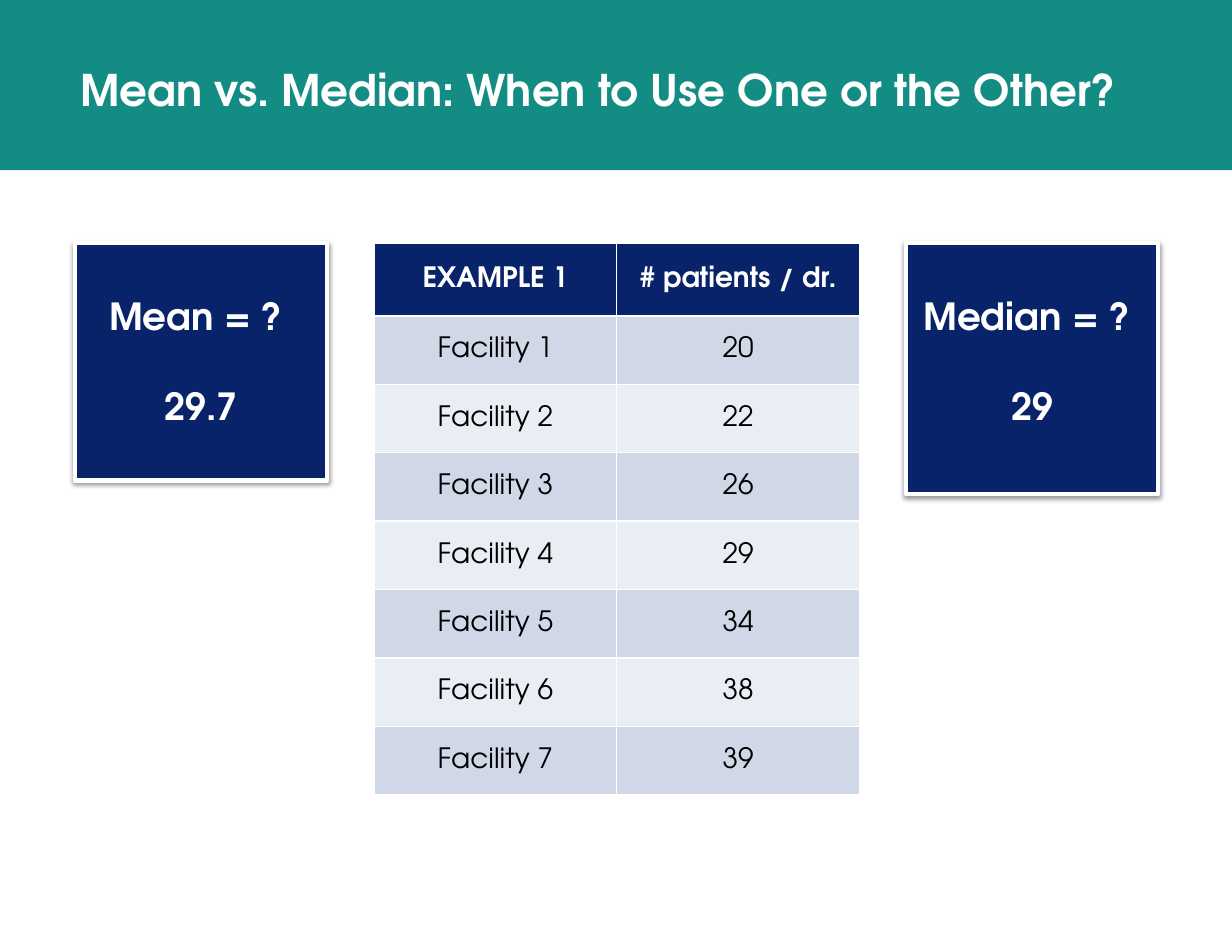
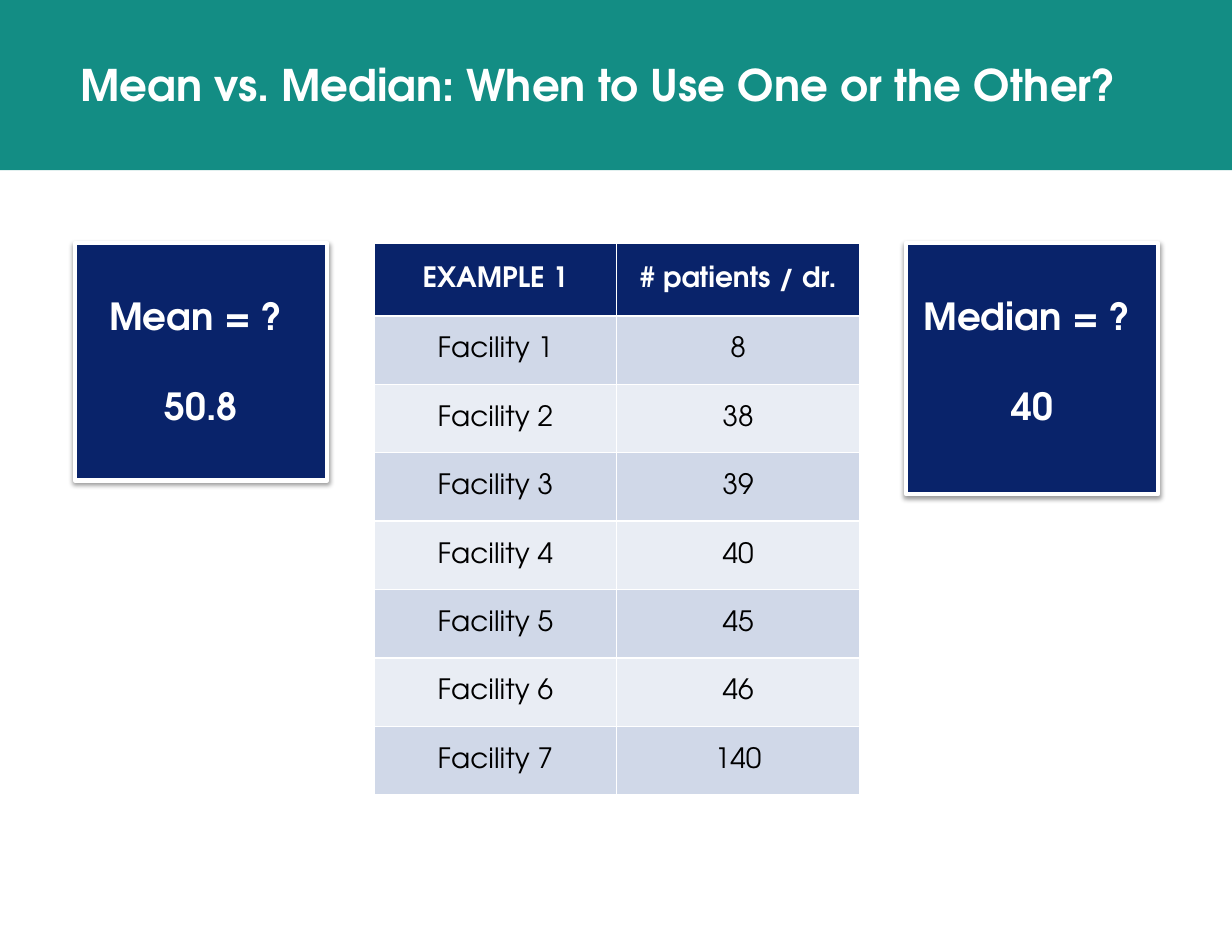
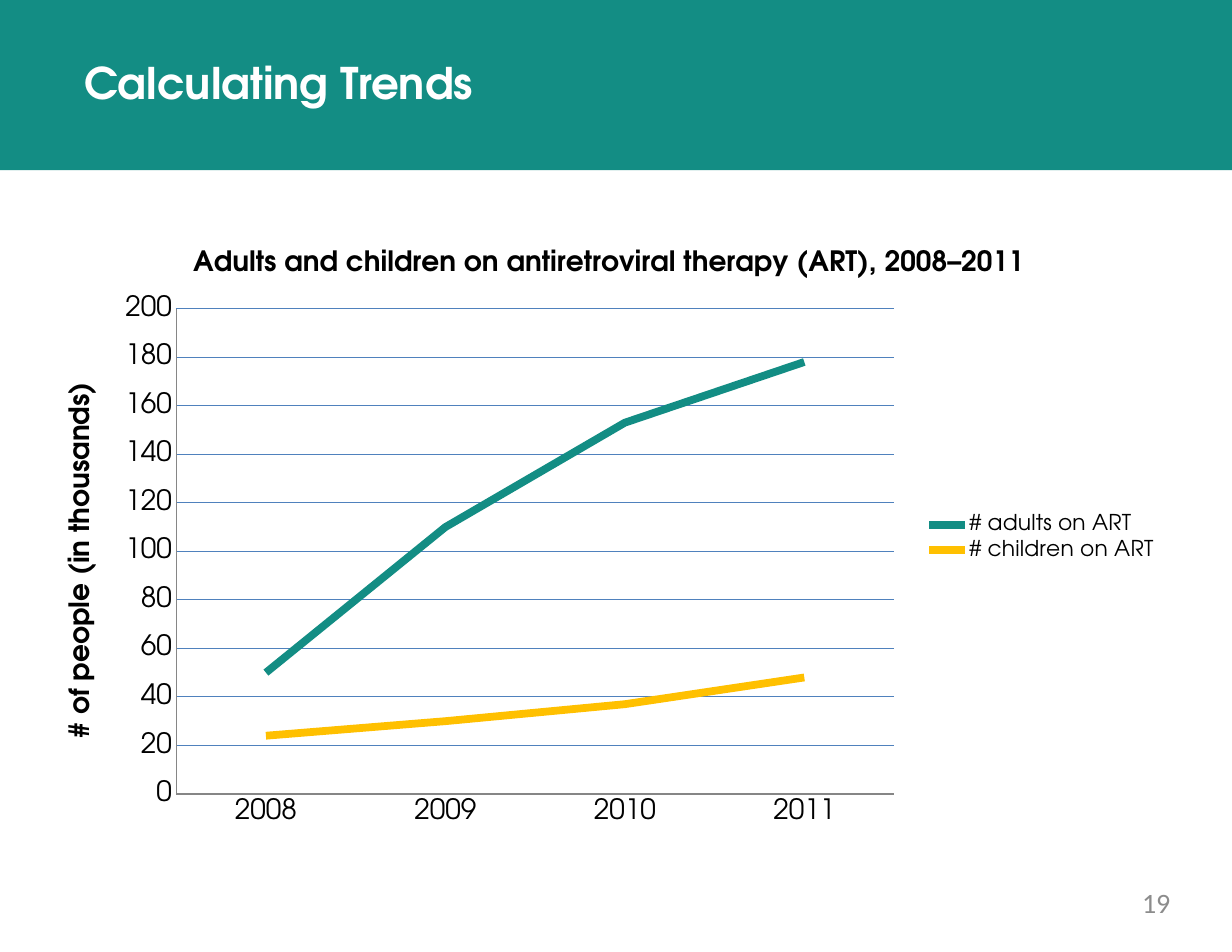
from dataclasses import dataclass

from lxml.etree import SubElement
from pptx import Presentation
from pptx.chart.data import CategoryChartData as ChartData
from pptx.dml.color import RGBColor as RGB
from pptx.enum.chart import XL_CHART_TYPE as Kind, XL_LEGEND_POSITION as Spot
from pptx.enum.chart import XL_MARKER_STYLE as Mark, XL_TICK_MARK as Tick
from pptx.enum.shapes import MSO_SHAPE as Form
from pptx.enum.text import MSO_ANCHOR as Anchor, PP_ALIGN as Align
from pptx.oxml import parse_xml
from pptx.oxml.ns import nsdecls, qn
from pptx.util import Pt

# Shared style
HUES = {
    "teal": "138D84", "navy": "09236A", "gold": "FFC000", "white": "FFFFFF",
    "black": "000000", "odd": "D0D8E8", "even": "E9EDF4", "grid": "4F81BD",
    "axis": "868686", "page": "8C8C8C",
}
FACE = "TeX Gyre Adventor"
WIDE, HIGH = 792, 612
TOP = 156.24
LINE = 28.8


@dataclass
class Box:
    left: float
    top: float
    width: float
    height: float

    def spread(self) -> list:
        return [Pt(n) for n in (self.left, self.top, self.width, self.height)]


@dataclass
class Card:
    label: str
    value: str
    box: Box


@dataclass
class Case:
    title: Box
    counts: list
    mean: str
    median: str


@dataclass
class Trend:
    name: str
    counts: list
    hue: str


CASES = [
    Case(Box(51.84, 40.3, 692, 67.7), [20, 22, 26, 29, 34, 38, 39], "29.7", "29"),
    Case(Box(51.84, 37.4, 710, 67.7), [8, 38, 39, 40, 45, 46, 140], "50.8", "40"),
]
TRENDS = [
    Trend("# adults on ART", [50, 110, 153, 178], "teal"),
    Trend("# children on ART", [24, 30, 37, 48], "gold"),
]


def tint(name: str) -> RGB:
    return RGB.from_string(HUES[name])


def style(font, size: float, hue: str, bold: bool = False, face: str = FACE) -> None:
    font.name, font.size, font.bold = face, Pt(size), bold
    font.color.rgb = tint(hue)


def paint(part, hue: str) -> None:
    part.fill.solid()
    part.fill.fore_color.rgb = tint(hue)


def add_text(slide, box: Box, text: str):
    frame = slide.shapes.add_textbox(*box.spread()).text_frame
    frame.word_wrap = True
    frame.margin_left = frame.margin_right = frame.margin_top = frame.margin_bottom = 0
    para = frame.paragraphs[0]
    para.text = text
    return para


def add_rect(slide, box: Box, hue: str):
    rect = slide.shapes.add_shape(Form.RECTANGLE, *box.spread())
    rect.shadow.inherit = False
    paint(rect, hue)
    rect.line.fill.background()
    return rect


def add_slide(deck, title: str, box: Box):
    slide = deck.slides.add_slide(deck.slide_layouts[6])
    add_rect(slide, Box(0, 0, WIDE, 109.44), "teal")
    style(add_text(slide, box, title).font, 28, "white", True)
    return slide


# Mean and median slides
def add_card(slide, card: Card) -> None:
    rect = add_rect(slide, card.box, "navy")
    rect.line.color.rgb = tint("white")
    rect.line.width = Pt(3)
    glow = rect._element.spPr.find(qn("a:effectLst"))
    glow.append(parse_xml(
        f'<a:outerShdw {nsdecls("a")} blurRad="{Pt(3.1)}" dist="{Pt(1.6)}" '
        f'dir="5400000" rotWithShape="0"><a:srgbClr val="{HUES["black"]}">'
        '<a:alpha val="38000"/></a:srgbClr></a:outerShdw>'))
    frame = rect.text_frame
    frame.word_wrap = True
    frame.vertical_anchor = Anchor.TOP
    frame.margin_top = Pt(3.6 + LINE)
    frame.text = f"{card.label} = ? \n{card.value}"
    for para in frame.paragraphs:
        para.alignment = Align.CENTER
        style(para.font, 24, "white", True)
    frame.paragraphs[1].space_before = Pt(LINE)


def add_grid(slide, counts: list) -> None:
    rows = [("EXAMPLE 1", "# patients / dr.")]
    rows += [(f"Facility {n}", str(count)) for n, count in enumerate(counts, 1)]
    box = Box(240.48, TOP, 312, 354.8)
    grid = slide.shapes.add_table(len(rows), 2, *box.spread()).table
    for r, texts in enumerate(rows):
        head = r == 0
        grid.rows[r].height = Pt(46.8 if head else 44)
        for c, text in enumerate(texts):
            cell = grid.cell(r, c)
            paint(cell, "navy" if head else "odd" if r % 2 else "even")
            cell.vertical_anchor = Anchor.MIDDLE
            cell.text = text
            para = cell.text_frame.paragraphs[0]
            para.alignment = Align.CENTER
            style(para.font, 18, "white" if head else "black", head)


def add_case(deck, case: Case) -> None:
    slide = add_slide(deck, "Mean vs. Median: When to Use One or the Other?", case.title)
    add_grid(slide, case.counts)
    add_card(slide, Card("Mean", case.mean, Box(48.24, TOP, 162, 152.6)))
    add_card(slide, Card("Median", case.median, Box(582.48, TOP, 162, 161.3)))


# Trend slide
def set_title(part, text: str) -> None:
    part.text_frame.text = text
    style(part.text_frame.paragraphs[0].font, 18, "black", True)


def set_plot(chart, x: float, y: float, w: float, h: float) -> None:
    area = chart._chartSpace.chart.plotArea
    for old in area.findall(qn("c:layout")):
        area.remove(old)
    frame = parse_xml(f'<c:layout {nsdecls("c")}><c:manualLayout/></c:layout>')
    area.insert(0, frame)
    rules = {"layoutTarget": "inner", "xMode": "edge", "yMode": "edge",
             "x": x, "y": y, "w": w, "h": h}
    for tag, val in rules.items():
        SubElement(frame[0], qn(f"c:{tag}")).set("val", str(val))


def add_trends(slide) -> None:
    data = ChartData()
    data.categories = ["2008", "2009", "2010", "2011"]
    for trend in TRENDS:
        data.add_series(trend.name, trend.counts)
    box = Box(30.24, 144, 722.16, 403.2)
    chart = slide.shapes.add_chart(Kind.LINE, *box.spread(), data).chart
    style(chart.font, 18, "black")
    chart.has_title = True
    set_title(chart.chart_title,
              "Adults and children on antiretroviral therapy (ART), 2008–2011")
    set_plot(chart, 0.115, 0.135, 0.639, 0.774)

    chart.has_legend = True
    chart.legend.position = Spot.RIGHT
    chart.legend.include_in_layout = False
    style(chart.legend.font, 14, "black")

    for axis in (chart.category_axis, chart.value_axis):
        axis.major_tick_mark = axis.minor_tick_mark = Tick.NONE
        axis.format.line.color.rgb = tint("axis")
        axis.format.line.width = Pt(0.75)
    axis = chart.value_axis
    axis.minimum_scale, axis.maximum_scale, axis.major_unit = 0, 200, 20
    axis.major_gridlines.format.line.color.rgb = tint("grid")
    axis.major_gridlines.format.line.width = Pt(0.75)
    set_title(axis.axis_title, "# of people (in thousands)")
    turn = axis.axis_title.text_frame._txBody.bodyPr
    turn.set("rot", "-5400000")
    turn.set("vert", "horz")

    chart.plots[0].vary_by_categories = False
    for line, trend in zip(chart.plots[0].series, TRENDS):
        line.smooth = False
        line.marker.style = Mark.NONE
        line.format.line.color.rgb = tint(trend.hue)
        line.format.line.width = Pt(5)


def main() -> None:
    deck = Presentation()
    deck.slide_width, deck.slide_height = Pt(WIDE), Pt(HIGH)
    for case in CASES:
        add_case(deck, case)
    slide = add_slide(deck, "Calculating Trends", Box(54, 36, 625.7, 58.3))
    add_trends(slide)
    page = add_text(slide, Box(570.24, 569.5, 182.16, 30.2), "19")
    page.alignment = Align.RIGHT
    style(page.font, 18, "page", face="Calibri")
    deck.save("out.pptx")


if __name__ == "__main__":
    main()
